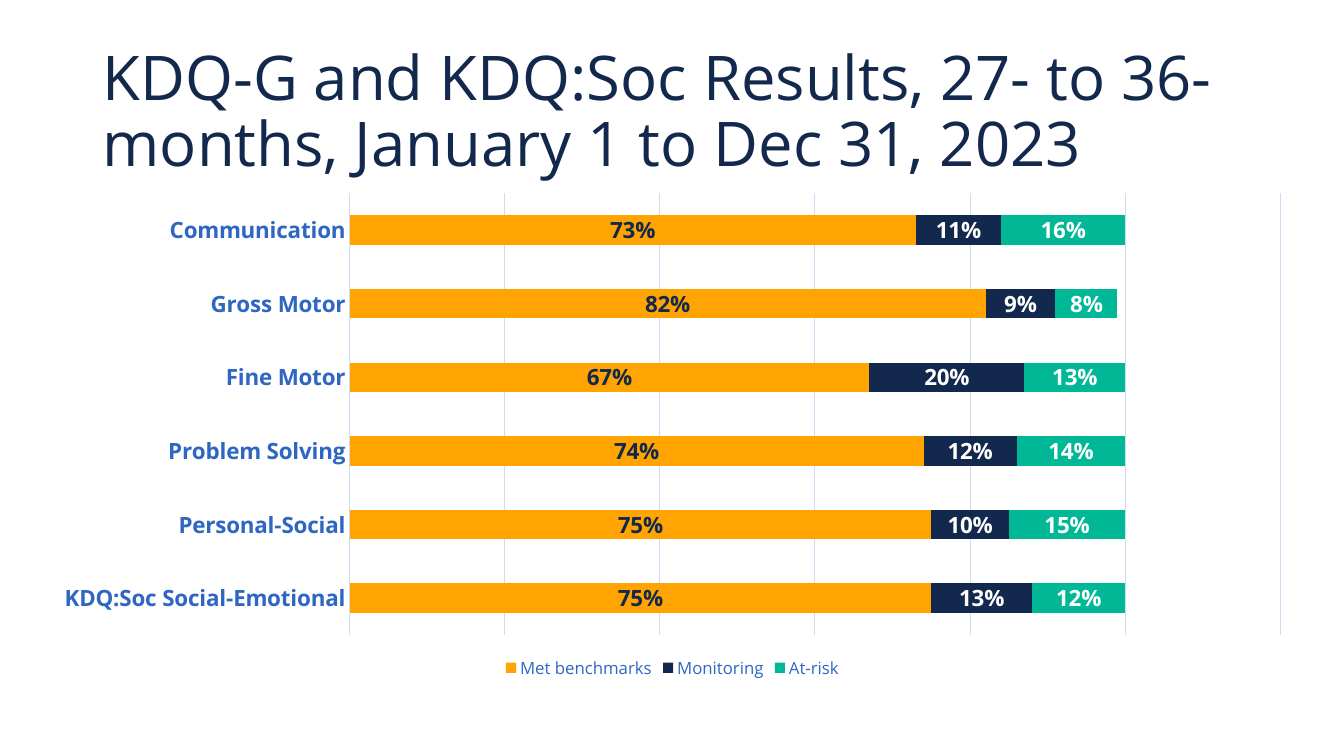
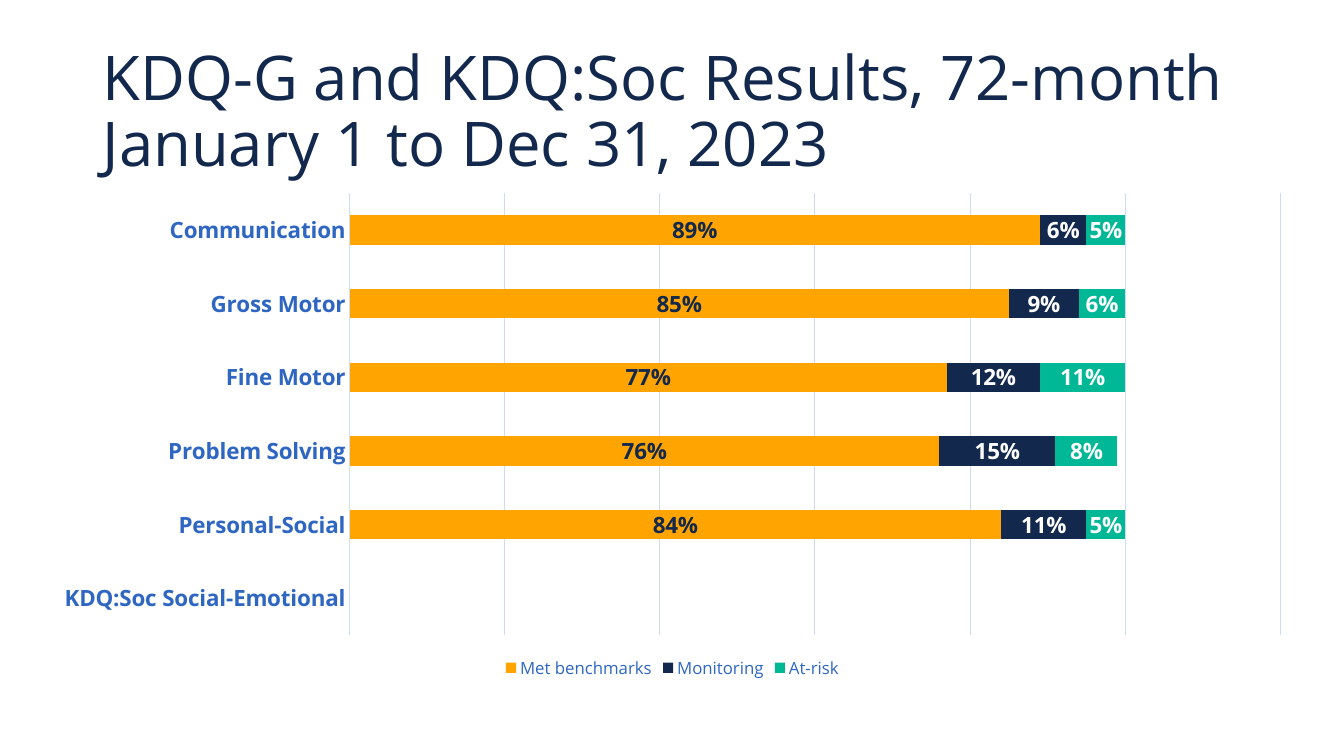
from dataclasses import dataclass
from typing import Optional

from pptx import Presentation
from pptx.chart.chart import Chart
from pptx.chart.data import CategoryChartData
from pptx.dml.color import RGBColor
from pptx.enum.chart import XL_CHART_TYPE, XL_LABEL_POSITION, XL_LEGEND_POSITION, XL_TICK_MARK
from pptx.enum.text import MSO_ANCHOR
from pptx.slide import Slide
from pptx.text.text import Font
from pptx.util import Inches, Pt

FONT_NAME = "Open Sans"
NAVY = RGBColor(0x12, 0x28, 0x4C)
BLUE = RGBColor(0x2E, 0x66, 0xC2)
PALE_BLUE = RGBColor(0xCD, 0xDB, 0xF3)
ORANGE = RGBColor(0xFF, 0xA4, 0x00)
GREEN = RGBColor(0x00, 0xB7, 0x96)
WHITE = RGBColor(0xFF, 0xFF, 0xFF)
PERCENT = "0%"


@dataclass(frozen=True)
class Outcome:
    name: str
    fill: RGBColor
    label_color: RGBColor


@dataclass(frozen=True)
class ResultsSlide:
    """Title lines, and one row of shares per outcome, in domain order."""
    title_lines: list[str]
    shares: list[list[Optional[float]]]


# A bar chart draws its first category at the bottom.
DOMAINS = ["KDQ:Soc Social-Emotional", "Personal-Social", "Problem Solving",
           "Fine Motor", "Gross Motor", "Communication"]

OUTCOMES = [
    Outcome("Met benchmarks", ORANGE, NAVY),
    Outcome("Monitoring", NAVY, WHITE),
    Outcome("At-risk", GREEN, WHITE),
]

RESULTS = [
    ResultsSlide(
        ["KDQ-G and KDQ:Soc Results, 27- to 36-months, January 1 to Dec 31, 2023"],
        [[0.75, 0.75, 0.74, 0.67, 0.82, 0.73],
         [0.13, 0.10, 0.12, 0.20, 0.09, 0.11],
         [0.12, 0.15, 0.14, 0.13, 0.08, 0.16]],
    ),
    ResultsSlide(
        ["KDQ-G and KDQ:Soc Results, 72-month", "January 1 to Dec 31, 2023"],
        [[None, 0.84, 0.76, 0.77, 0.85, 0.89],
         [None, 0.11, 0.15, 0.12, 0.09, 0.06],
         [None, 0.05, 0.08, 0.11, 0.06, 0.05]],
    ),
]


def style_font(font: Font, size: int, color: RGBColor, bold: bool = False) -> None:
    font.name = FONT_NAME
    font.size = Pt(size)
    font.bold = bold
    font.color.rgb = color


def add_title(page: Slide, lines: list[str]) -> None:
    box = page.shapes.add_textbox(Inches(0.92), Inches(0.4), Inches(11.5), Inches(1.45))
    frame = box.text_frame
    frame.word_wrap = True
    frame.vertical_anchor = MSO_ANCHOR.MIDDLE
    para = frame.paragraphs[0]
    para.line_spacing = 0.9
    for index, line in enumerate(lines):
        if index:
            para.add_line_break()
        span = para.add_run()
        span.text = line
        style_font(span.font, 44, NAVY)


def style_axes(chart: Chart) -> None:
    domains = chart.category_axis
    domains.major_tick_mark = domains.minor_tick_mark = XL_TICK_MARK.NONE
    style_font(domains.tick_labels.font, 16, BLUE, bold=True)

    shares = chart.value_axis
    shares.visible = False
    shares.minimum_scale, shares.maximum_scale, shares.major_unit = 0, 1.2, 0.2
    shares.has_major_gridlines = True
    shares.tick_labels.number_format = PERCENT
    shares.tick_labels.number_format_is_linked = False

    for line in (domains.format.line, shares.major_gridlines.format.line):
        line.color.rgb = PALE_BLUE
        line.width = Pt(0.75)


def style_bars(chart: Chart) -> None:
    plot = chart.plots[0]
    plot.gap_width = 150
    plot.overlap = 100
    plot.vary_by_categories = False
    for series, outcome in zip(plot.series, OUTCOMES):
        series.format.fill.solid()
        series.format.fill.fore_color.rgb = outcome.fill
        labels = series.data_labels
        labels.show_value = True
        labels.position = XL_LABEL_POSITION.CENTER
        labels.number_format = PERCENT
        labels.number_format_is_linked = False
        style_font(labels.font, 16, outcome.label_color, bold=True)


def add_results_chart(page: Slide, shares: list[list[Optional[float]]]) -> None:
    data = CategoryChartData(number_format=PERCENT)
    data.categories = DOMAINS
    for outcome, values in zip(OUTCOMES, shares):
        data.add_series(outcome.name, values)
    chart = page.shapes.add_chart(
        XL_CHART_TYPE.BAR_STACKED,
        Inches(0.39), Inches(1.82), Inches(12.56), Inches(4.96), data,
    ).chart
    style_font(chart.font, 10, NAVY)
    chart.has_title = False
    chart.has_legend = True
    chart.legend.position = XL_LEGEND_POSITION.BOTTOM
    chart.legend.include_in_layout = False
    style_font(chart.legend.font, 12, BLUE)
    style_axes(chart)
    style_bars(chart)


def main() -> None:
    deck = Presentation()
    deck.slide_width, deck.slide_height = Inches(13.33), Inches(7.5)
    blank = deck.slide_layouts[6]
    for result in RESULTS:
        page = deck.slides.add_slide(blank)
        add_title(page, result.title_lines)
        add_results_chart(page, result.shares)
    deck.save("out.pptx")


if __name__ == "__main__":
    main()
